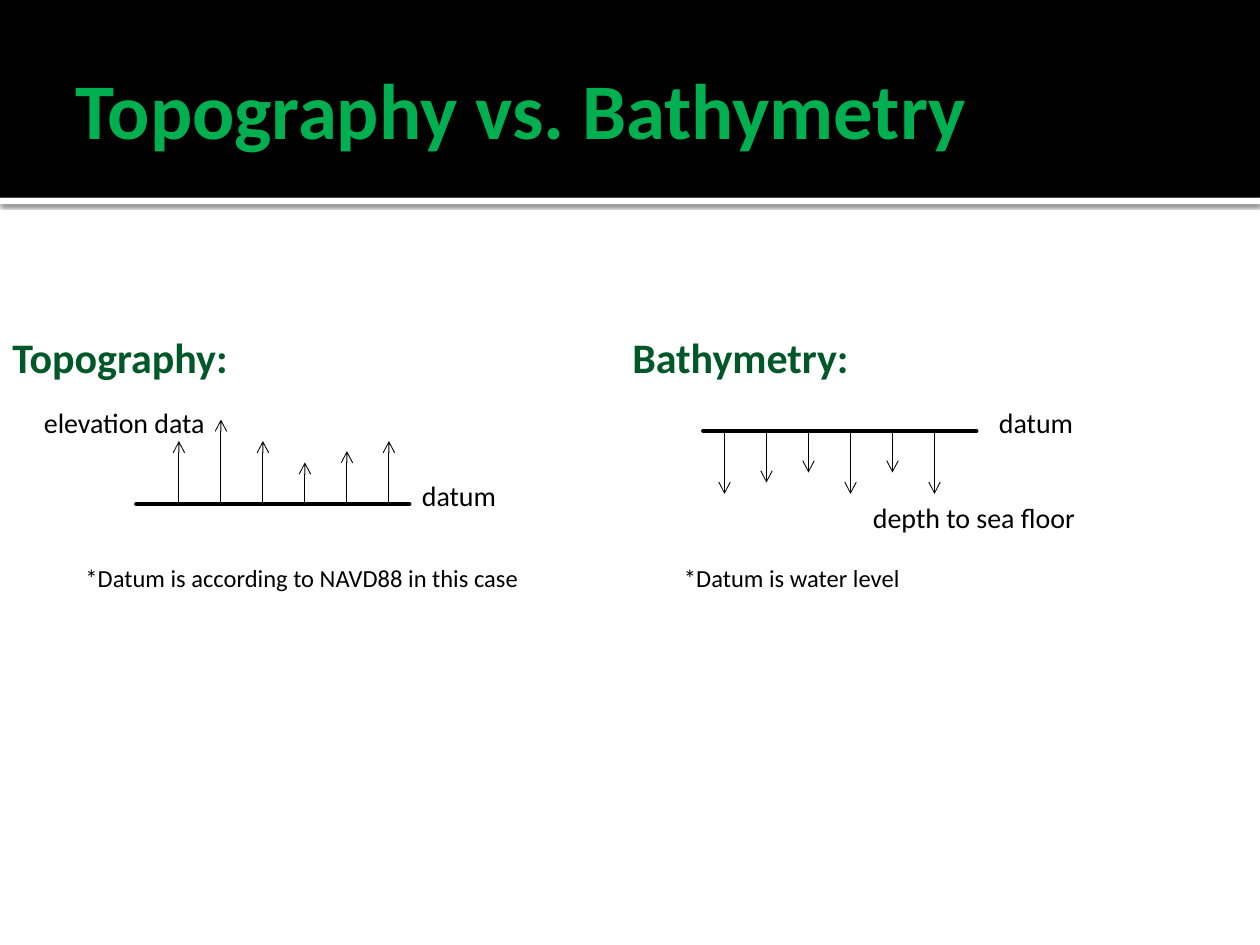
from dataclasses import dataclass

from lxml import etree
from pptx import Presentation
from pptx.dml.color import RGBColor
from pptx.enum.shapes import MSO_CONNECTOR, MSO_SHAPE
from pptx.enum.text import MSO_ANCHOR, MSO_AUTO_SIZE, PP_ALIGN
from pptx.oxml import parse_xml
from pptx.oxml.ns import nsdecls, qn
from pptx.util import Inches, Pt

STRAIGHT = MSO_CONNECTOR.STRAIGHT
RECTANGLE = MSO_SHAPE.RECTANGLE
MIDDLE = MSO_ANCHOR.MIDDLE
LEFT = PP_ALIGN.LEFT
NO_FIT, GROW = MSO_AUTO_SIZE.NONE, MSO_AUTO_SIZE.SHAPE_TO_FIT_TEXT

BLACK, WHITE = "000000", "FFFFFF"
TITLE_GREEN, HEADING_GREEN = "00B050", "005828"
FONT = "Calibri"
ARROW_GAP = 1 / 3

HEADING = {"size": Pt(24), "bold": True}
LABEL = {"size": Pt(16), "bold": False}
NOTE = {"size": Pt(14), "bold": False}


@dataclass
class Caption:
    text: str
    left: float
    top: float
    width: float
    height: float
    style: dict
    color: str = BLACK


@dataclass
class Profile:
    """A datum line with arrows; positive lengths point down."""
    left: float
    right: float
    level: float
    first_arrow: float
    lengths: list[float]


CAPTIONS = [
    Caption("Topography:", 0, 2.58, 2.58, 0.5, HEADING, HEADING_GREEN),
    Caption("elevation data", 0.25, 3.17, 1.75, 0.37, LABEL),
    Caption("datum", 3.25, 3.75, 1.08, 0.37, LABEL),
    Caption("*Datum is according to NAVD88 in this case", 0.58, 4.42, 3.75, 0.34, NOTE),
    Caption("Bathymetry:", 4.92, 2.58, 2.58, 0.5, HEADING, HEADING_GREEN),
    Caption("datum", 7.83, 3.17, 1.08, 0.37, LABEL),
    Caption("depth to sea floor", 6.83, 3.92, 2.17, 0.37, LABEL),
    Caption("*Datum is water level", 5.33, 4.42, 3.75, 0.34, NOTE),
]
PROFILES = [
    Profile(1.08, 3.25, 4, 1.42, [-0.5, -0.67, -0.5, -0.33, -0.42, -0.5]),
    Profile(5.58, 7.75, 3.42, 5.75, [0.5, 0.41, 0.33, 0.5, 0.33, 0.5]),
]


def rgb(color: str) -> RGBColor:
    return RGBColor.from_string(color)


def write(frame, text: str, style: dict, color: str) -> None:
    para = frame.paragraphs[0]
    para.alignment = LEFT
    span = para.add_run()
    span.text = text
    for name, value in {"name": FONT, **style}.items():
        setattr(span.font, name, value)
    span.font.color.rgb = rgb(color)


def add_band(slide, top: float, height: float, color: str):
    band = slide.shapes.add_shape(RECTANGLE, 0, Inches(top), Inches(10), Inches(height))
    band.shadow.inherit = False
    band.fill.solid()
    band.fill.fore_color.rgb = rgb(color)
    band.line.fill.background()
    return band


def add_band_shadow(band) -> None:
    effects = band.element.spPr.find(qn("a:effectLst"))
    effects.append(parse_xml(
        f'<a:outerShdw {nsdecls("a")} blurRad="{Pt(2.5)}" dist="{Pt(0.8)}" '
        f'dir="5400000" rotWithShape="0"><a:srgbClr val="{BLACK}">'
        '<a:alpha val="60000"/></a:srgbClr></a:outerShdw>'))


def add_title(slide, text: str) -> None:
    title = slide.shapes.title
    place = {"left": 0.5, "top": 0.17, "width": 9, "height": 1.37}
    for name, value in place.items():
        setattr(title, name, Inches(value))
    frame = title.text_frame
    layout = {"vertical_anchor": MIDDLE, "auto_size": NO_FIT, "word_wrap": True,
              "margin_left": Inches(0.1), "margin_right": Inches(0.05)}
    for name, value in layout.items():
        setattr(frame, name, value)
    write(frame, text, {"size": Pt(45), "bold": True}, TITLE_GREEN)
    slide.shapes.element.append(title.element)  # bring in front of the bands


def add_caption(slide, caption: Caption) -> None:
    box = slide.shapes.add_textbox(Inches(caption.left), Inches(caption.top),
                                   Inches(caption.width), Inches(caption.height))
    box.text_frame.word_wrap = True
    box.text_frame.auto_size = GROW
    write(box.text_frame, caption.text, caption.style, caption.color)


def add_line(group, start: tuple, end: tuple, weight: float, arrow: bool = False) -> None:
    line = group.shapes.add_connector(STRAIGHT, *map(Inches, start + end))
    line.line.color.rgb = rgb(BLACK)
    line.line.width = Pt(weight)
    properties = line.element.spPr
    if arrow:
        etree.SubElement(properties.find(qn("a:ln")), qn("a:tailEnd"), type="arrow")
    else:
        properties.find(qn("a:ln")).set("cap", "rnd")
    etree.SubElement(properties, qn("a:effectLst"))


def add_profile(slide, profile: Profile) -> None:
    group = slide.shapes.add_group_shape()
    level = profile.level
    add_line(group, (profile.left, level), (profile.right, level), 2.25)
    for index, length in enumerate(profile.lengths):
        x = profile.first_arrow + index * ARROW_GAP
        add_line(group, (x, level), (x, level + length), 0.5, arrow=True)


def main() -> None:
    deck = Presentation()
    deck.slide_width, deck.slide_height = Inches(10), Inches(7.5)
    slide = deck.slides.add_slide(deck.slide_layouts[5])
    add_band_shadow(add_band(slide, 1.57, 0.05, WHITE))
    add_band(slide, 0, 1.57, BLACK)
    add_title(slide, "Topography vs. Bathymetry")
    for profile in PROFILES:
        add_profile(slide, profile)
    for caption in CAPTIONS:
        add_caption(slide, caption)
    deck.save("out.pptx")


if __name__ == "__main__":
    main()
